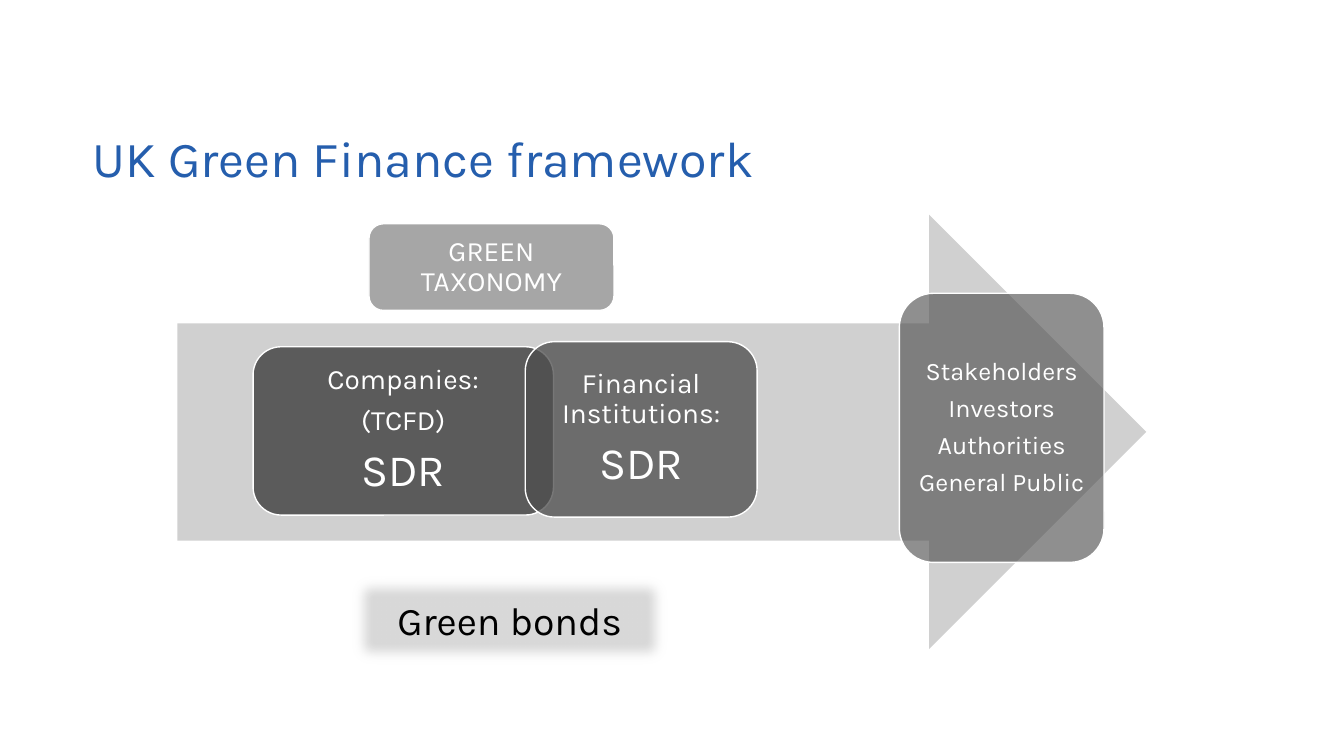
import pptx
import pptx.util
import pptx.dml.color
import pptx.enum.shapes
import pptx.enum.text
import pptx.oxml
import pptx.oxml.ns
from pptx.util import Inches

FONT = "Karla"
WHITE = "FFFFFF"
DARK_GREY = "4F4F4F"
SHAPE = pptx.enum.shapes.MSO_SHAPE
ALIGN = pptx.enum.text.PP_ALIGN
ANCHOR = pptx.enum.text.MSO_ANCHOR
NS = pptx.oxml.ns.nsdecls("a")


def color(value):
    return pptx.dml.color.RGBColor.from_string(value)


def set_insets(tf, left, top, right, bottom):
    tf.margin_left, tf.margin_top = Inches(left), Inches(top)
    tf.margin_right, tf.margin_bottom = Inches(right), Inches(bottom)


def style_paragraph(p, size, font_color, align=ALIGN.CENTER, line_spacing=0.9):
    p.alignment = align
    p.line_spacing = line_spacing
    p.font.name = FONT
    p.font.size = pptx.util.Pt(size)
    p.font.color.rgb = color(font_color)


def add_filled_shape(s, kind, box, fill):
    sp = s.shapes.add_shape(kind, *map(Inches, box))
    sp.shadow.inherit = False
    sp.fill.solid()
    sp.fill.fore_color.rgb = color(fill)
    sp.line.fill.background()
    return sp


def add_card(s, box, opacity, lines, inset=0.08):
    """Add a see-through rounded box; lines holds (text, size) pairs."""
    sp = add_filled_shape(s, SHAPE.ROUNDED_RECTANGLE, box, DARK_GREY)
    fill = sp.fill._xPr.find(".//" + pptx.oxml.ns.qn("a:srgbClr"))
    fill.append(pptx.oxml.parse_xml(f'<a:alpha {NS} val="{opacity * 1000}"/>'))
    sp.line.color.rgb = color(WHITE)
    sp.line.width = pptx.util.Pt(1)
    tf = sp.text_frame
    tf.word_wrap = True
    tf.vertical_anchor = ANCHOR.MIDDLE
    set_insets(tf, inset, inset, inset, inset)
    for i, (text, size) in enumerate(lines):
        p = tf.add_paragraph() if i else tf.paragraphs[0]
        p.text = text
        style_paragraph(p, size, WHITE)
        p.space_after = pptx.util.Pt(round(0.4 * size, 1))


def add_soft_label(s, box, text):
    sp = add_filled_shape(s, SHAPE.RECTANGLE, box, "D9D9D9")
    effects = sp._element.spPr.find(pptx.oxml.ns.qn("a:effectLst"))
    radius = pptx.util.Pt(10)
    effects.append(pptx.oxml.parse_xml(f'<a:softEdge {NS} rad="{radius}"/>'))
    sp.text_frame.vertical_anchor = ANCHOR.MIDDLE
    p = sp.text_frame.paragraphs[0]
    p.text = text
    style_paragraph(p, 28, "000000", line_spacing=1.0)


def set_title(s, text):
    title = s.shapes.title
    title.left, title.top = Inches(0.92), Inches(1.13)
    title.width, title.height = Inches(10.35), Inches(0.79)
    tf = title.text_frame
    tf.word_wrap = True
    tf.vertical_anchor = ANCHOR.BOTTOM
    set_insets(tf, 0, 0.05, 0.1, 0.05)
    p = tf.paragraphs[0]
    p.text = text
    style_paragraph(p, 36, "255EAD", ALIGN.LEFT)


def main():
    prs = pptx.Presentation()
    prs.slide_width, prs.slide_height = Inches(13.33), Inches(7.5)
    s = prs.slides.add_slide(prs.slide_layouts[5])
    set_title(s, "UK Green Finance framework")

    add_filled_shape(s, SHAPE.RIGHT_ARROW, (1.76, 2.13, 9.61, 4.31), "D0D0D0")
    add_card(s, (2.51, 3.44, 2.98, 1.67), 90,
             [("Companies:", 20), ("(TCFD)", 20), ("SDR", 32)])
    add_card(s, (5.21, 3.39, 2.3, 1.74), 77,
             [("Financial Institutions:", 20), ("SDR", 32)])
    audience = ["Stakeholders", "Investors", "Authorities", "General Public"]
    add_card(s, (8.92, 2.91, 2.03, 2.67), 63,
             [(name, 18) for name in audience], inset=0.07)
    add_card(s, (3.66, 2.22, 2.43, 0.86), 50, [("GREEN TAXONOMY", 20)])
    add_soft_label(s, (3.44, 5.66, 3.23, 0.98), "Green bonds")
    prs.save("out.pptx")


if __name__ == "__main__":
    main()
